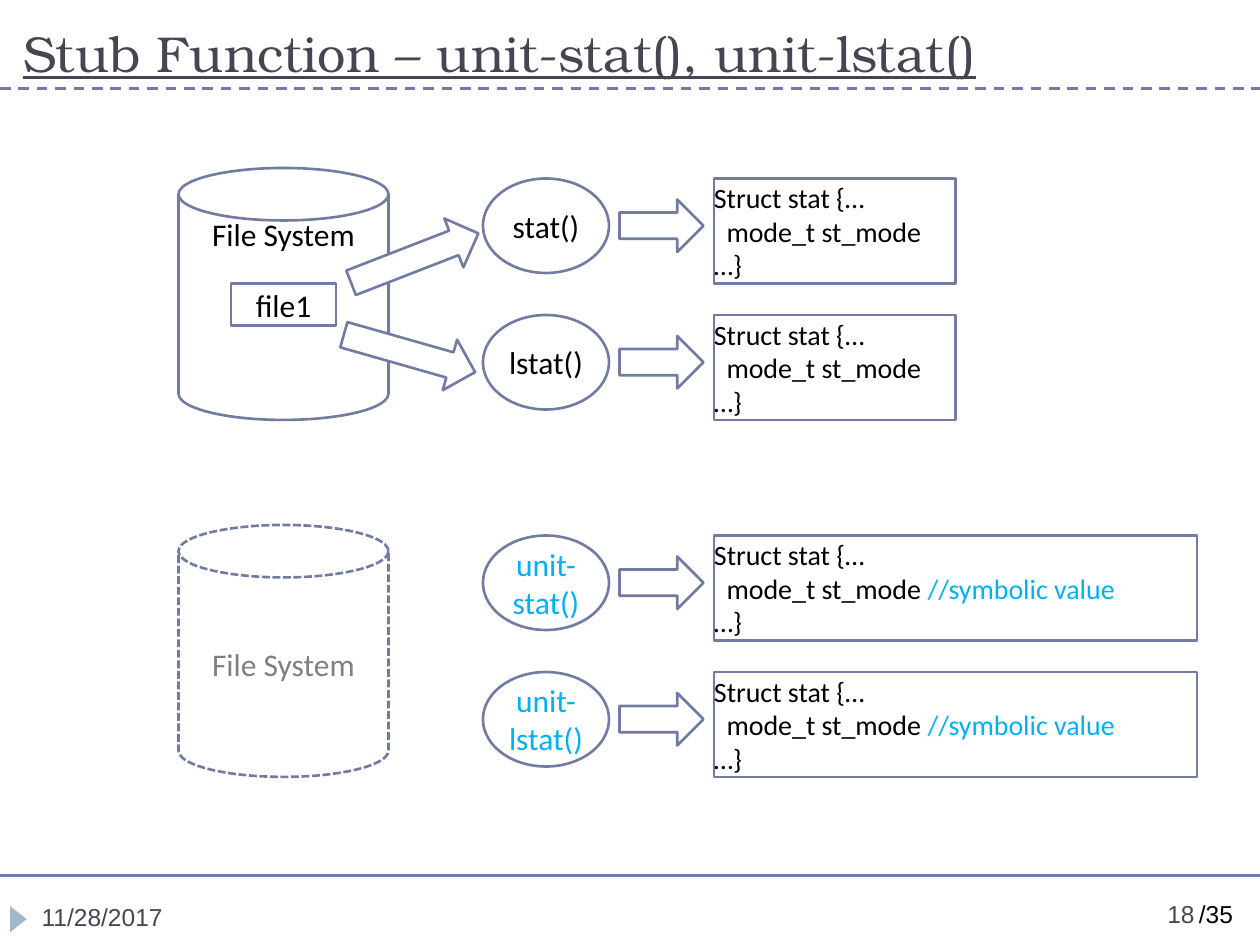
from pptx import Presentation
from pptx.dml.color import RGBColor
from pptx.enum.dml import MSO_LINE as DASH
from pptx.enum.shapes import MSO_CONNECTOR, MSO_SHAPE as SHAPE
from pptx.enum.text import MSO_ANCHOR as ANCHOR, MSO_AUTO_SIZE, PP_ALIGN as ALIGN
from pptx.oxml.ns import qn
from pptx.util import Pt

SLATE = RGBColor(0x72, 0x7C, 0xA3)
PALE_BLUE = RGBColor(0x9F, 0xB8, 0xCD)
DARK = RGBColor(0x46, 0x46, 0x53)
BLACK = RGBColor(0, 0, 0)
WHITE = RGBColor(255, 255, 255)
GRAY = RGBColor(0x80, 0x80, 0x80)
CYAN = RGBColor(0, 0xB0, 0xF0)

prs = Presentation()
prs.slide_width, prs.slide_height = Pt(720), Pt(540)
s = prs.slides.add_slide(prs.slide_layouts[5])


def add_outlined(kind, x, y, w, h, rotation=0):
    sp = s.shapes.add_shape(kind, Pt(x), Pt(y), Pt(w), Pt(h))
    sp.shadow.inherit = False
    sp.rotation = rotation
    sp.fill.solid()
    sp.fill.fore_color.rgb = WHITE
    sp.line.color.rgb = SLATE
    sp.line.width = Pt(1.5)
    tf = sp.text_frame
    tf.margin_left = tf.margin_top = tf.margin_right = tf.margin_bottom = 0
    tf.vertical_anchor = ANCHOR.MIDDLE
    return sp


def write(p, text, size, color, font="Calibri", align=ALIGN.CENTER):
    p.text = text
    p.alignment = align
    p.font.size = Pt(size)
    p.font.name = font
    p.font.color.rgb = color


# Rules under the title and above the footer
for y, dash in ((50.4, DASH.DASH), (500.4, None)):
    rule = s.shapes.add_connector(MSO_CONNECTOR.STRAIGHT, 0, Pt(y), Pt(720), Pt(y))
    rule.line.color.rgb = SLATE
    rule.line.width = Pt(1.5)
    if dash:
        rule.line.dash_style = dash
    rule._element.spPr.append(rule._element.spPr.makeelement(qn("a:effectLst"), {}))

# Title
title = s.shapes.title
title.left, title.top, title.width, title.height = Pt(6), Pt(12), Pt(708), Pt(39)
tf = title.text_frame
tf.auto_size = MSO_AUTO_SIZE.NONE
tf.vertical_anchor = ANCHOR.BOTTOM
write(tf.paragraphs[0], "Stub Function – unit-stat(), unit-lstat()", 28.8, DARK,
      "TeX Gyre Bonum", ALIGN.LEFT)
tf.paragraphs[0].font.underline = True

# Footer: marker, date, page number and page count
marker = add_outlined(SHAPE.ISOSCELES_TRIANGLE, 3, 520.5, 15, 9.5, 90)
marker.fill.fore_color.rgb = PALE_BLUE
marker.line.fill.background()
for text, x, y, w, color in (("11/28/2017", 16.7, 512, 101.5, DARK),
                             ("18", 660, 510, 36, DARK),
                             ("/35", 678, 510, 34, BLACK)):
    box = s.shapes.add_textbox(Pt(x), Pt(y), Pt(w), Pt(23))
    box.text_frame.word_wrap = text != "/35"
    write(box.text_frame.paragraphs[0], text, 14, color, "Arial", ALIGN.LEFT)

# File systems: the real one, and the dashed one that the stubs replace
for y, color, dash, bottom in ((96, BLACK, DASH.SOLID, 84),
                               (300, GRAY, DASH.SQUARE_DOT, 0)):
    can = add_outlined(SHAPE.CAN, 102, y, 120, 144)
    can.line.dash_style = dash
    can.text_frame.margin_bottom = Pt(bottom)
    write(can.text_frame.paragraphs[0], "File System", 18, color)

file_box = add_outlined(SHAPE.RECTANGLE, 132, 162, 60, 24)
write(file_box.text_frame.paragraphs[0], "file1", 18, BLACK)

# One row per function: ellipse, arrow, resulting struct
for name, y, color, struct_width, comment in (
        ("stat()", 102, BLACK, 138, ""),
        ("lstat()", 180, BLACK, 138, ""),
        ("unit-stat()", 306, CYAN, 276, "//symbolic value"),
        ("unit-lstat()", 384, CYAN, 276, "//symbolic value")):
    function = add_outlined(SHAPE.OVAL, 276, y, 72, 54)
    write(function.text_frame.paragraphs[0], name, 18, color)
    add_outlined(SHAPE.RIGHT_ARROW, 354, y + 12, 48, 30)

    tf = add_outlined(SHAPE.RECTANGLE, 408, y, struct_width, 60).text_frame
    write(tf.paragraphs[0], "Struct stat {…", 16, BLACK, align=ALIGN.LEFT)
    member = tf.add_paragraph()
    write(member, "mode_t st_mode", 16, BLACK, align=ALIGN.LEFT)
    member._p.get_or_add_pPr().set("marL", str(Pt(7.2)))
    if comment:
        r = member.add_run()
        r.text = " " + comment
        r.font.color.rgb = CYAN
    write(tf.add_paragraph(), "…}", 16, BLACK, align=ALIGN.LEFT)

# Slanted arrows from the file to both functions
add_outlined(SHAPE.RIGHT_ARROW, 198, 132.5, 78, 30, -21.2)
add_outlined(SHAPE.RIGHT_ARROW, 195, 187, 78, 30, 15.9)

prs.save("out.pptx")
